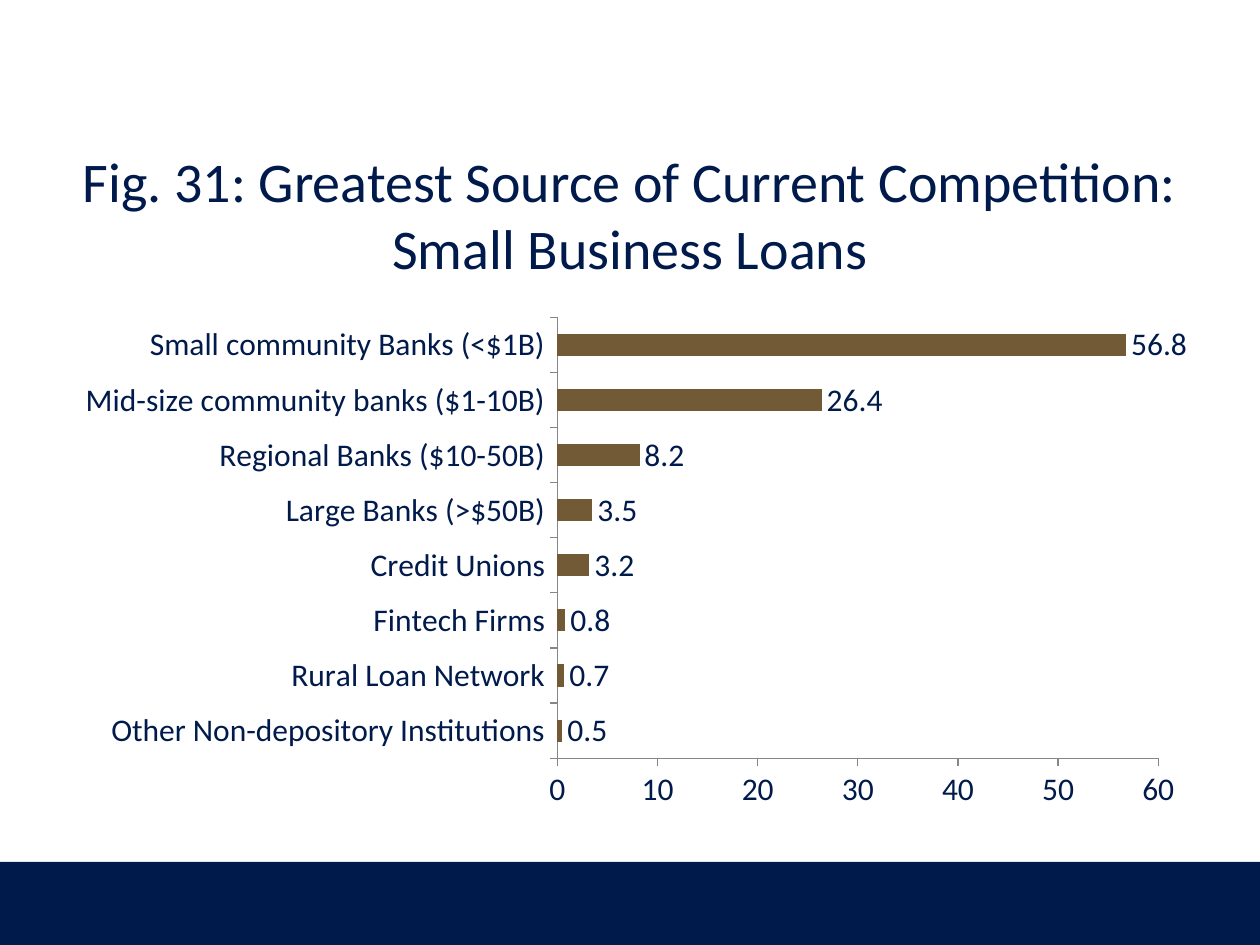
import pptx
import pptx.chart.data
import pptx.dml.color
import pptx.enum.chart
import pptx.enum.shapes
import pptx.enum.text
import pptx.util

Pt = pptx.util.Pt
COLORS = {"navy": "001A4B", "brown": "715A35", "axis": "868686"}
COMPETITORS = {
    "Other Non-depository Institutions": 0.5,
    "Rural Loan Network": 0.7,
    "Fintech Firms": 0.8,
    "Credit Unions": 3.2,
    "Large Banks (>$50B)": 3.5,
    "Regional Banks ($10-50B)": 8.2,
    "Mid-size community banks ($1-10B)": 26.4,
    "Small community Banks (<$1B)": 56.8,
}


def rgb(name):
    return pptx.dml.color.RGBColor.from_string(COLORS[name])


def set_all(obj, **values):
    for name, value in values.items():
        setattr(obj, name, value)


class SlideBuilder:
    font = "Calibri"

    def __init__(self, slide):
        self.s = slide

    def style(self, font, size):
        set_all(font, name=self.font, size=Pt(size), bold=False)
        font.color.rgb = rgb("navy")

    def band(self, left, top, width, height):
        sp = self.s.shapes.add_shape(
            pptx.enum.shapes.MSO_SHAPE.RECTANGLE,
            Pt(left), Pt(top), Pt(width), Pt(height))
        sp.shadow.inherit = False
        sp.fill.solid()
        sp.fill.fore_color.rgb = rgb("navy")
        sp.line.fill.background()

    def title(self, text, left, top, width, height):
        sp = self.s.shapes.title
        set_all(sp, left=Pt(left), top=Pt(top), width=Pt(width), height=Pt(height))
        tf = sp.text_frame
        set_all(tf, text=text, word_wrap=True,
                vertical_anchor=pptx.enum.text.MSO_ANCHOR.MIDDLE)
        p = tf.paragraphs[0]
        p.alignment = pptx.enum.text.PP_ALIGN.CENTER
        self.style(p.runs[0].font, 32)

    def bar_chart(self, values, left, top, width, height):
        data = pptx.chart.data.CategoryChartData(number_format="#,##0.0")
        data.categories = list(values)
        data.add_series("Series 1", list(values.values()))
        chart = self.s.shapes.add_chart(
            pptx.enum.chart.XL_CHART_TYPE.BAR_CLUSTERED,
            Pt(left), Pt(top), Pt(width), Pt(height), data).chart
        set_all(chart, has_legend=False, has_title=False)
        self.style(chart.font, 18)

        plot = chart.plots[0]
        set_all(plot, gap_width=150, vary_by_categories=False, has_data_labels=True)
        set_all(plot.data_labels, show_value=True, number_format="#,##0.0",
                number_format_is_linked=False,
                position=pptx.enum.chart.XL_LABEL_POSITION.OUTSIDE_END)
        fill = plot.series[0].format.fill
        fill.solid()
        fill.fore_color.rgb = rgb("brown")

        for axis in (chart.category_axis, chart.value_axis):
            set_all(axis, has_major_gridlines=False,
                    major_tick_mark=pptx.enum.chart.XL_TICK_MARK.OUTSIDE,
                    minor_tick_mark=pptx.enum.chart.XL_TICK_MARK.NONE)
            axis.format.line.color.rgb = rgb("axis")
            axis.format.line.width = Pt(0.75)
        set_all(chart.value_axis, minimum_scale=0, maximum_scale=60, major_unit=10)
        set_all(chart.value_axis.tick_labels, number_format="0",
                number_format_is_linked=False)


def main():
    prs = pptx.Presentation()
    set_all(prs, slide_width=Pt(720), slide_height=Pt(540))
    title_only = prs.slide_layouts[5]
    builder = SlideBuilder(prs.slides.add_slide(title_only))
    builder.band(0, 492.5, 720, 47.5)
    builder.title("Fig. 31: Greatest Source of Current Competition: Small Business Loans",
                  36, 77, 648, 90)
    builder.bar_chart(COMPETITORS, 36, 175.5, 648, 292.5)
    prs.save("out.pptx")


if __name__ == "__main__":
    main()
